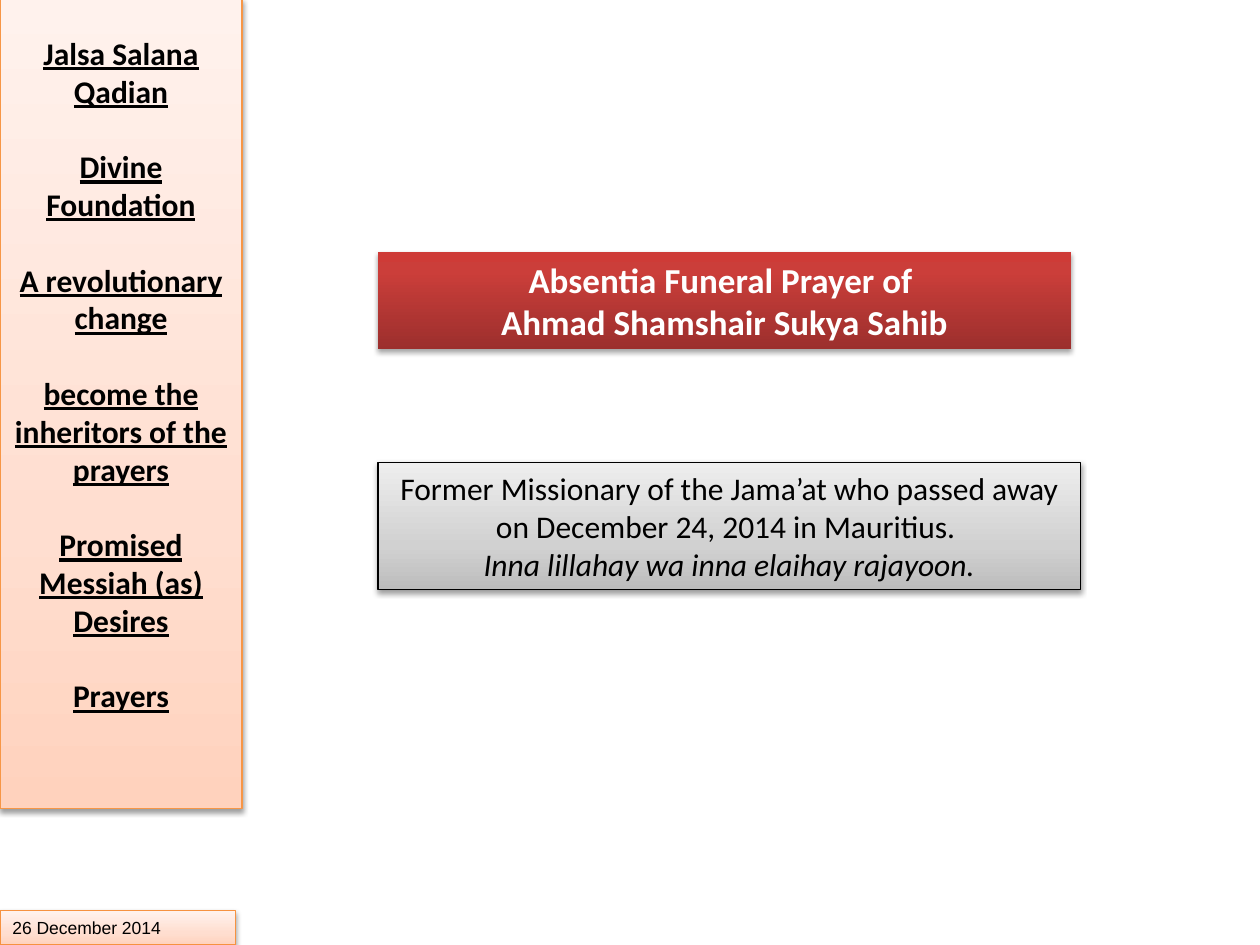
from pptx import Presentation
from pptx import util as u
from pptx.dml.color import RGBColor
from pptx.enum import shapes, text
from pptx.oxml import parse_xml
from pptx.oxml.ns import nsdecls

COLOURS = {
    "black": "000000",
    "white": "FFFFFF",
    "orange": "F79646",
    "date_line": "F69240",
}
# Gradient stops run from the bottom edge to the top edge
GRADIENTS = {
    "red": [(0, "9C2F2D"), (80, "CB3E3A"), (100, "CE3B37")],
    "grey": [(0, "BDBDBD"), (35, "D1D1D1"), (100, "EEEEEE")],
    "peach": [(0, "FFD2BD"), (35, "FFDED0"), (100, "FFF2ED")],
}
TOPICS = [
    "Jalsa Salana Qadian",
    "Divine Foundation",
    "A revolutionary change",
    "become the inheritors of the prayers",
    "Promised Messiah (as) Desires",
    "Prayers",
]


def place(shape, left, top, width, height):
    shape.left, shape.top = u.Cm(left), u.Cm(top)
    shape.width, shape.height = u.Cm(width), u.Cm(height)


def style_panel(shape, gradient, line=None, distance=1.6, opacity=38):
    """Give a panel its vertical gradient, outline and soft shadow."""
    shape.fill.gradient()
    gradient_fill = shape.fill._xPr.find(".//{*}gradFill")
    stops = "".join(
        f'<a:gs pos="{position * 1000}"><a:srgbClr val="{colour}"/></a:gs>'
        for position, colour in GRADIENTS[gradient])
    new_fill = parse_xml(
        f'<a:gradFill {nsdecls("a")} rotWithShape="1"><a:gsLst>{stops}</a:gsLst>'
        '<a:lin ang="16200000" scaled="0"/></a:gradFill>')
    gradient_fill.getparent().replace(gradient_fill, new_fill)

    if line:
        shape.line.color.rgb = RGBColor.from_string(COLOURS[line])
        shape.line.width = u.Pt(0.75)
    else:
        shape.line.fill.background()

    shape.shadow.inherit = False
    effects = shape._element.spPr.find("{*}effectLst")
    effects.append(parse_xml(
        f'<a:outerShdw {nsdecls("a")} blurRad="{u.Pt(3.1)}" dist="{u.Pt(distance)}" '
        'dir="5400000" rotWithShape="0">'
        f'<a:srgbClr val="{COLOURS["black"]}"><a:alpha val="{opacity * 1000}"/>'
        '</a:srgbClr></a:outerShdw>'))


def write(shape, lines, size, colour="black", font="Calibri", bold=False,
          align=text.PP_ALIGN.CENTER, anchor=text.MSO_ANCHOR.MIDDLE, gap=0):
    frame = shape.text_frame
    frame.text = "\n".join(lines)
    frame.auto_size = text.MSO_AUTO_SIZE.NONE
    frame.word_wrap = True
    frame.vertical_anchor = anchor
    frame.margin_left = frame.margin_right = u.Cm(0.25)
    frame.margin_top = frame.margin_bottom = u.Cm(0.13)
    for paragraph in frame.paragraphs:
        paragraph.alignment = align
        paragraph.space_before = u.Pt(0)
        paragraph.space_after = u.Pt(gap)
        for run in paragraph.runs:
            run.font.name = font
            run.font.size = u.Pt(size)
            run.font.bold = bold
            run.font.color.rgb = RGBColor.from_string(COLOURS[colour])
    return frame


def add_panel(slide, left, top, width, height, gradient, line):
    shape = slide.shapes.add_shape(
        shapes.MSO_SHAPE.RECTANGLE,
        u.Cm(left), u.Cm(top), u.Cm(width), u.Cm(height))
    style_panel(shape, gradient, line)
    return shape


def format_title(title):
    place(title, 7.62, 5.08, 13.97, 1.96)
    style_panel(title, "red", distance=1.8, opacity=35)
    write(title, ["Absentia Funeral Prayer of ", "Ahmad Shamshair Sukya Sahib"],
          20, colour="white", bold=True)


def format_topics(body):
    place(body, 0, -0.03, 4.88, 16.33)
    style_panel(body, "peach", "orange")
    frame = write(body, TOPICS, 18, bold=True,
                  anchor=text.MSO_ANCHOR.TOP, gap=21.6)
    frame.margin_top = u.Cm(0.71)
    for paragraph in frame.paragraphs:
        properties = paragraph._p.get_or_add_pPr()
        properties.set("marL", "0")
        properties.set("indent", "0")
        properties.append(parse_xml(f'<a:buNone {nsdecls("a")}/>'))
        for run in paragraph.runs:
            run.font.underline = True


def main():
    presentation = Presentation()
    presentation.slide_width, presentation.slide_height = u.Cm(25.4), u.Cm(19.05)
    slide = presentation.slides.add_slide(presentation.slide_layouts[1])

    # Heading and topic sidebar
    format_title(slide.shapes.title)
    format_topics(slide.placeholders[1])

    # Announcement
    announcement = add_panel(slide, 7.62, 9.32, 14.17, 2.57, "grey", "black")
    frame = write(announcement, [
        "Former Missionary of the Jama’at who passed away "
        "on December 24, 2014 in Mauritius. ",
        "Inna lillahay wa inna elaihay rajayoon.",
    ], 18)
    frame.paragraphs[1].runs[0].font.italic = True

    # Date
    date = add_panel(slide, 0, 18.36, 4.75, 0.69, "peach", "date_line")
    frame = write(date, ["26 December 2014"], 10, font="Arial",
                  align=text.PP_ALIGN.LEFT)
    frame.word_wrap = False

    presentation.save("out.pptx")


if __name__ == "__main__":
    main()
